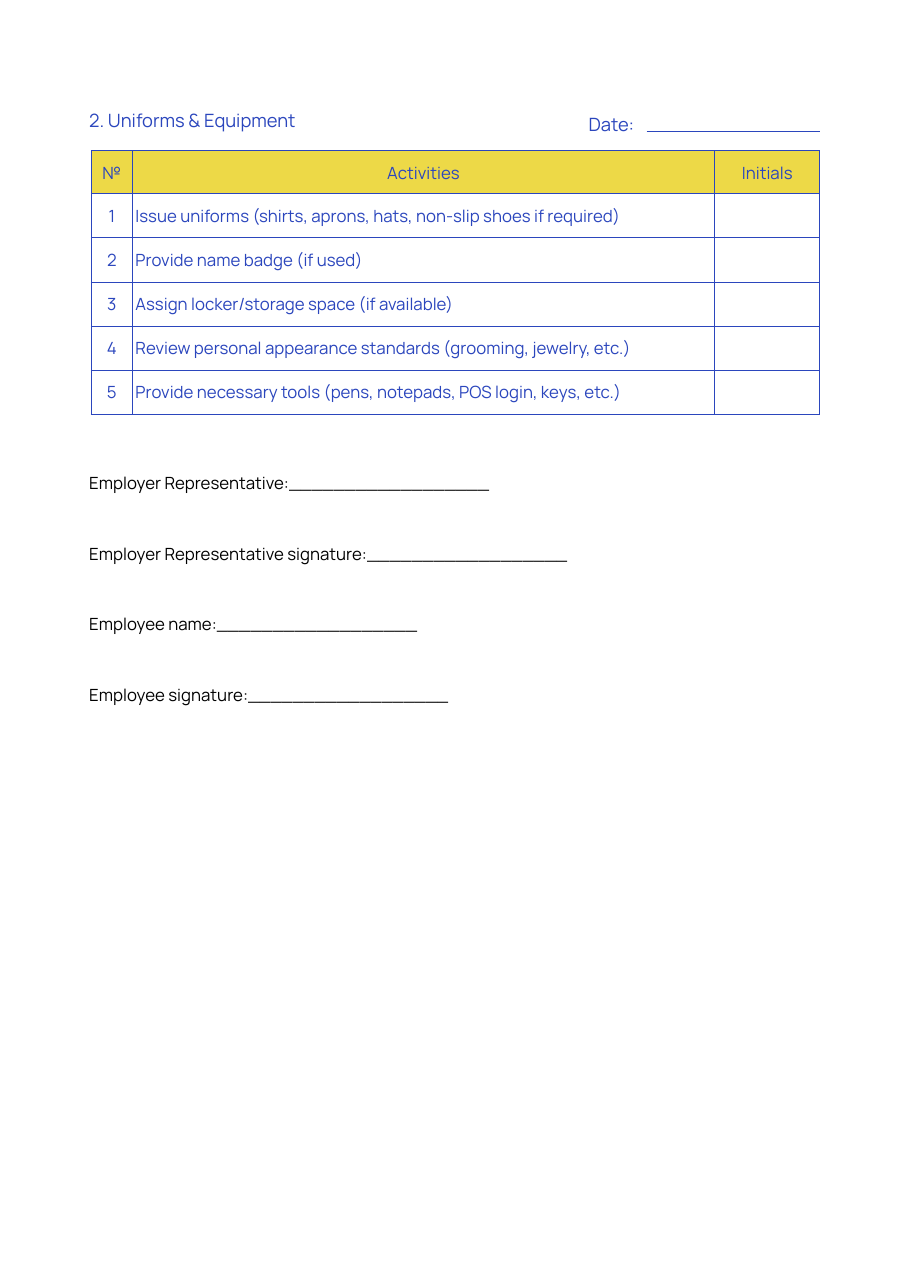
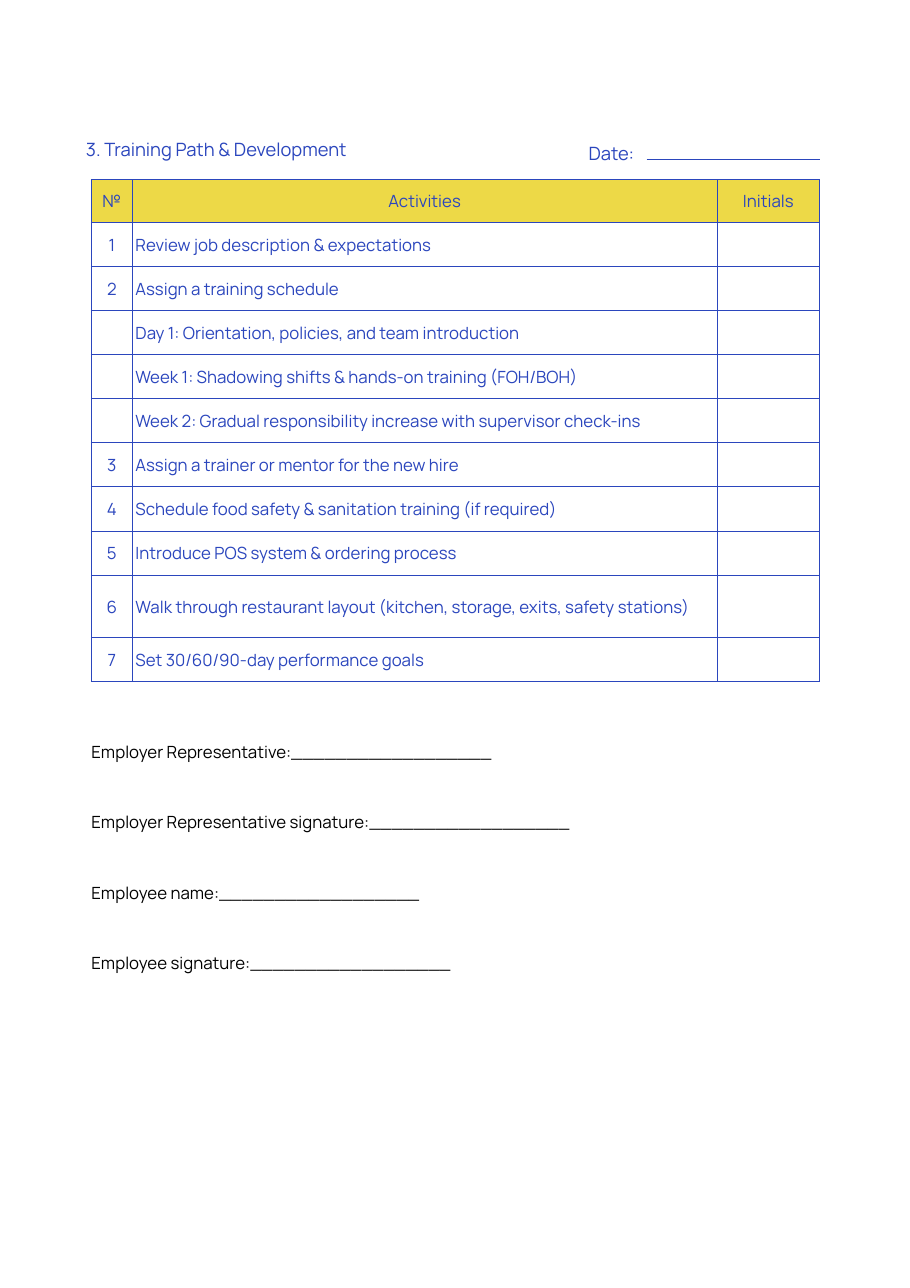
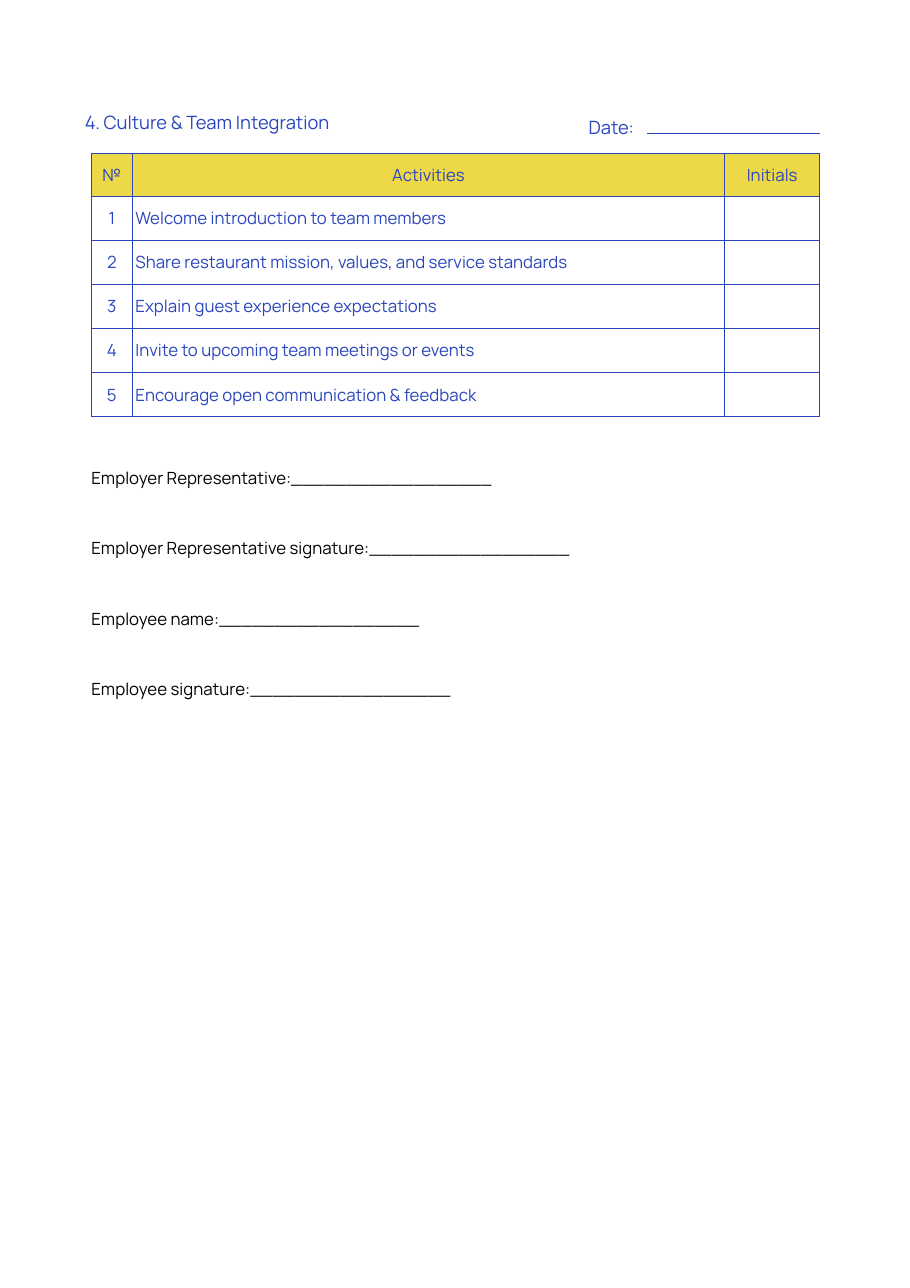
from lxml import etree
from pptx import Presentation
from pptx.dml.color import RGBColor
from pptx.enum.shapes import MSO_CONNECTOR
from pptx.enum.text import MSO_ANCHOR, MSO_AUTO_SIZE, PP_ALIGN
from pptx.oxml.ns import qn
from pptx.util import Inches, Pt

STRAIGHT = MSO_CONNECTOR.STRAIGHT
MIDDLE = MSO_ANCHOR.MIDDLE
FIT_SHAPE = MSO_AUTO_SIZE.SHAPE_TO_FIT_TEXT
LEFT, CENTER = PP_ALIGN.LEFT, PP_ALIGN.CENTER

BLUE, YELLOW, BLACK = "2B46BD", "EDD947", "000000"
FONT = "Manrope"
LINE_SPACING = {11: 15.4, 12: 16.6}
BORDER = 0.75

TABLE_LEFT, TABLE_WIDTH, NUMBER_WIDTH = 0.83, 6.61, 0.37
HEADER_HEIGHT, ROW_HEIGHT, TALL_HEIGHT = 0.39, 0.4, 0.57
SIGNATURE_STEP = 0.64
HEADINGS = ("№", "Activities", "Initials")
SIGNATURES = ("Employer Representative:", "Employer Representative signature:",
              "Employee name:", "Employee signature:")

PAGES = [
    dict(title="2. Uniforms & Equipment", title_left=0.81, table_top=1.37,
         activity_width=5.29, signature_left=0.81, signature_top=4.26,
         activities=[
             ("1", "Issue uniforms (shirts, aprons, hats, non-slip shoes if required)"),
             ("2", "Provide name badge (if used)"),
             ("3", "Assign locker/storage space (if available)"),
             ("4", "Review personal appearance standards (grooming, jewelry, etc.)"),
             ("5", "Provide necessary tools (pens, notepads, POS login, keys, etc.)"),
         ]),
    dict(title="3. Training Path & Development", title_left=0.78, table_top=1.63,
         activity_width=5.31, signature_left=0.83, signature_top=6.7, tall="6",
         activities=[
             ("1", "Review job description & expectations"),
             ("2", "Assign a training schedule"),
             ("", "Day 1: Orientation, policies, and team introduction"),
             ("", "Week 1: Shadowing shifts & hands-on training (FOH/BOH)"),
             ("", "Week 2: Gradual responsibility increase with supervisor check-ins"),
             ("3", "Assign a trainer or mentor for the new hire"),
             ("4", "Schedule food safety & sanitation training (if required)"),
             ("5", "Introduce POS system & ordering process"),
             ("6", "Walk through restaurant layout (kitchen, storage, exits, safety stations)"),
             ("7", "Set 30/60/90-day performance goals"),
         ]),
    dict(title="4. Culture & Team Integration", title_left=0.77, table_top=1.39,
         activity_width=5.38, signature_left=0.83, signature_top=4.21,
         activities=[
             ("1", "Welcome introduction to team members"),
             ("2", "Share restaurant mission, values, and service standards"),
             ("3", "Explain guest experience expectations"),
             ("4", "Invite to upcoming team meetings or events"),
             ("5", "Encourage open communication & feedback"),
         ]),
]


def color(value):
    return RGBColor.from_string(value)


class Checklist:
    """Holds the checklist style and draws on the current slide."""

    def __init__(self):
        self.deck = Presentation()
        self.deck.slide_width, self.deck.slide_height = Inches(8.26), Inches(11.69)
        self.slide = None

    def new_slide(self):
        self.slide = self.deck.slides.add_slide(self.deck.slide_layouts[6])

    def styled_run(self, paragraph, text, size, ink, align):
        paragraph.alignment = align
        paragraph.line_spacing = Pt(LINE_SPACING[size])
        run = paragraph.add_run()
        run.text = text
        run.font.name, run.font.size = FONT, Pt(size)
        run.font.color.rgb = color(ink)

    def text(self, text, left, top, width, height, size=12, ink=BLUE, align=LEFT):
        label = self.slide.shapes.add_textbox(
            Inches(left), Inches(top), Inches(width), Inches(height))
        frame = label.text_frame
        frame.word_wrap = True
        frame.auto_size = FIT_SHAPE
        frame.margin_left = frame.margin_top = frame.margin_right = frame.margin_bottom = 0
        self.styled_run(frame.paragraphs[0], text, size, ink, align)

    def rule(self, left, right, y):
        rule = self.slide.shapes.add_connector(
            STRAIGHT, Inches(left), Inches(y), Inches(right), Inches(y))
        rule.line.color.rgb = color(BLUE)
        rule.line.width = Pt(BORDER)
        etree.SubElement(rule._element.spPr, qn("a:effectLst"))

    def border(self, cell):
        properties = cell._tc.get_or_add_tcPr()
        for side in ("a:lnL", "a:lnR", "a:lnT", "a:lnB"):
            edge = etree.SubElement(properties, qn(side), w=str(Pt(BORDER)))
            fill = etree.SubElement(edge, qn("a:solidFill"))
            etree.SubElement(fill, qn("a:srgbClr"), val=BLUE)

    def cell(self, cell, text, align, fill):
        cell.margin_left = cell.margin_top = cell.margin_right = cell.margin_bottom = 0
        cell.vertical_anchor = MIDDLE
        self.border(cell)
        if fill:
            cell.fill.solid()
            cell.fill.fore_color.rgb = color(fill)
        else:
            cell.fill.background()
        if align == LEFT:
            cell.margin_left = Inches(0.03)
        if text:
            self.styled_run(cell.text_frame.paragraphs[0], text, 11, BLUE, align)

    def table(self, top, activity_width, activities, tall):
        rows = [HEADINGS] + [(number, activity, "") for number, activity in activities]
        heights = [HEADER_HEIGHT] + [
            TALL_HEIGHT if number == tall else ROW_HEIGHT for number, _ in activities]
        widths = (NUMBER_WIDTH, activity_width, TABLE_WIDTH - NUMBER_WIDTH - activity_width)
        table = self.slide.shapes.add_table(
            len(rows), len(widths), Inches(TABLE_LEFT), Inches(top),
            Inches(TABLE_WIDTH), Inches(sum(heights))).table
        table.first_row = table.horz_banding = False
        for column, width in zip(table.columns, widths):
            column.width = Inches(width)
        for r, (row, height) in enumerate(zip(rows, heights)):
            table.rows[r].height = Inches(height)
            for c, text in enumerate(row):
                self.cell(table.cell(r, c), text,
                          LEFT if r and c == 1 else CENTER, None if r else YELLOW)

    def heading(self, title, left, table_top):
        self.rule(5.87, TABLE_LEFT + TABLE_WIDTH, table_top - 0.18)
        self.text("Date:", 5.23, table_top - 0.37, 0.64, 0.23, align=CENTER)
        self.text(title, left, table_top - 0.41, 3.11, 0.24)

    def signatures(self, left, top):
        for i, signature in enumerate(SIGNATURES):
            self.text(signature + "_" * 18, left, top + i * SIGNATURE_STEP,
                      4.93, 0.22, size=11, ink=BLACK)

    def page(self, title, title_left, table_top, activity_width, signature_left,
             signature_top, activities, tall=None):
        self.new_slide()
        self.table(table_top, activity_width, activities, tall)
        self.heading(title, title_left, table_top)
        self.signatures(signature_left, signature_top)


def main():
    checklist = Checklist()
    for page in PAGES:
        checklist.page(**page)
    checklist.deck.save("out.pptx")


if __name__ == "__main__":
    main()
